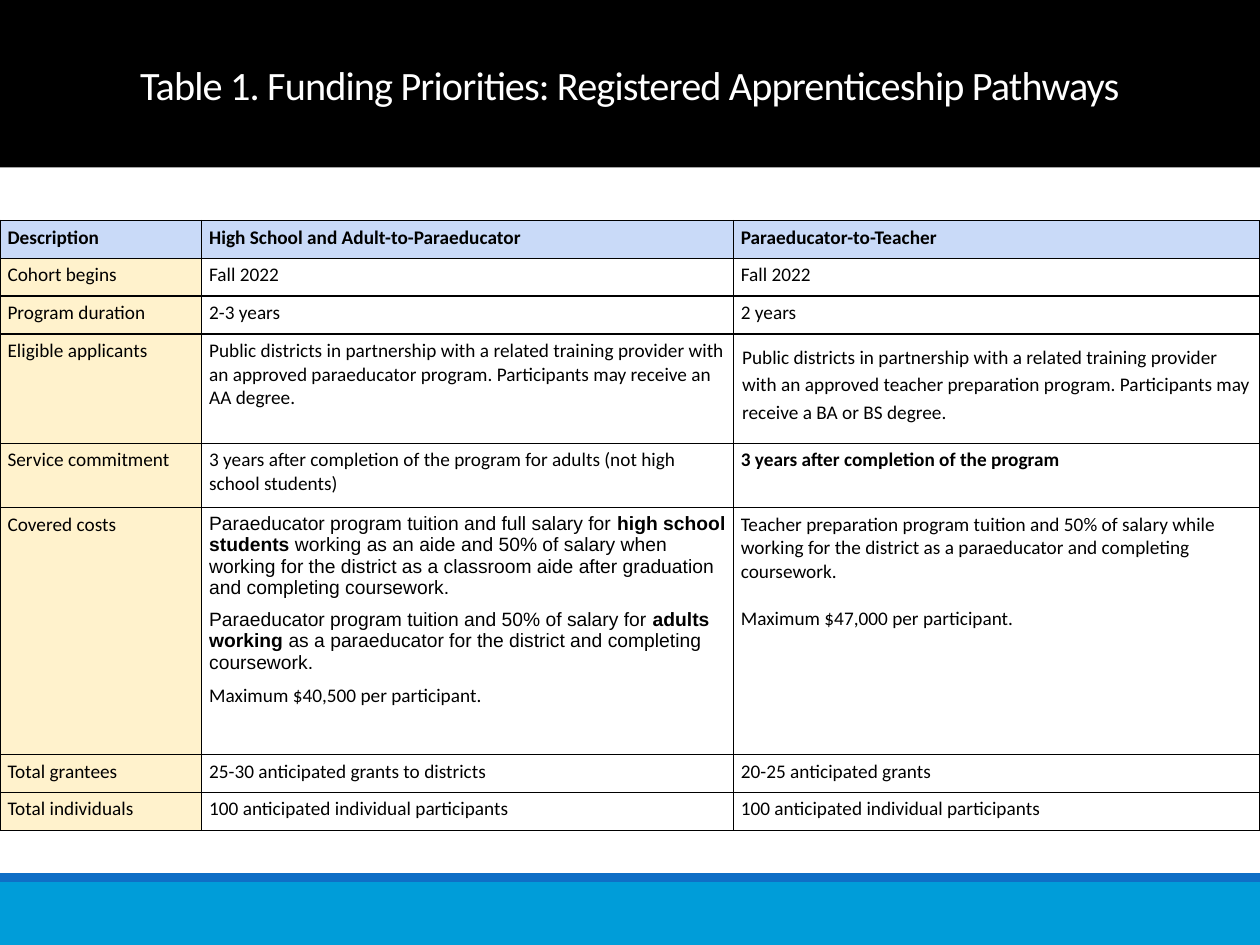
"""Build the funding priorities slide with its table of pathways."""
import dataclasses

import pptx
import pptx.dml.color
import pptx.enum.shapes
import pptx.enum.text
import pptx.oxml
import pptx.oxml.ns
import pptx.util

Inches = pptx.util.Inches
Pt = pptx.util.Pt
BLACK = "000000"
WHITE = "FFFFFF"
BLUE = "C9DAF8"
CREAM = "FFF2CC"


@dataclasses.dataclass
class Run:
    text: str
    bold: bool = False
    font: str = "Calibri"


@dataclasses.dataclass
class Para:
    runs: list[Run]
    after: float = 0
    space: float = 1


@dataclasses.dataclass
class Cell:
    paras: list[Para]
    side: float = 0.06
    edge: float = 0.04


@dataclasses.dataclass
class Band:
    top: float
    height: float
    fill: str


def plain(text: str, bold: bool = False) -> Cell:
    return Cell([Para([Run(text, bold)])])


def mixed(start: str, strong: str, end: str) -> Para:
    return Para([Run(start, font="Arial"), Run(strong, True, "Arial"),
                 Run(end, font="Arial")], after=6)


BANDS = [Band(7, 0.5, "009DD9"), Band(6.93, 0.07, "0F6FC6"), Band(0, 1.33, BLACK)]
WIDTHS = [1.6, 4.22, 4.18]
HEIGHTS = [0.3, 0.3, 0.3, 0.87, 0.51, 1.96, 0.3, 0.3]
TITLE = "Table 1. Funding Priorities: Registered Apprenticeship Pathways"
ROWS = [
    [plain("Description", True),
     plain("High School and Adult-to-Paraeducator", True),
     plain("Paraeducator-to-Teacher", True)],
    [plain("Cohort begins"), plain("Fall 2022"), plain("Fall 2022")],
    [plain("Program duration"), plain("2-3 years"), plain("2 years")],
    [plain("Eligible applicants"),
     plain("Public districts in partnership with a related training provider with "
           "an approved paraeducator program. Participants may receive an AA degree."),
     Cell([Para([Run("Public districts in partnership with a related training provider "
                     "with an approved teacher preparation program. Participants may "
                     "receive a BA or BS degree.")], space=1.15)], 0.07, 0.07)],
    [plain("Service commitment"),
     plain("3 years after completion of the program for adults (not high school students)"),
     plain("3 years after completion of the program", True)],
    [plain("Covered costs"),
     Cell([mixed("Paraeducator program tuition and full salary for ",
                 "high school students",
                 " working as an aide and 50% of salary when working for the district "
                 "as a classroom aide after graduation and completing coursework."),
           mixed("Paraeducator program tuition and 50% of salary for ",
                 "adults working",
                 " as a paraeducator for the district and completing coursework."),
           Para([Run("Maximum $40,500 per participant.")])]),
     Cell([Para([Run("Teacher preparation program tuition and 50% of salary while working "
                     "for the district as a paraeducator and completing coursework.")],
                after=13.4),
           Para([Run("Maximum $47,000 per participant.")])])],
    [plain("Total grantees"), plain("25-30 anticipated grants to districts"),
     plain("20-25 anticipated grants")],
    [plain("Total individuals"), plain("100 anticipated individual participants"),
     plain("100 anticipated individual participants")],
]


def paint(fill, tint: str) -> None:
    fill.solid()
    fill.fore_color.rgb = pptx.dml.color.RGBColor.from_string(tint)


def write(para, run: Run, size: float, tint: str):
    part = para.add_run()
    part.text = run.text
    part.font.name = run.font
    part.font.size = Pt(size)
    part.font.bold = run.bold
    paint(part.font.fill, tint)
    return part


def draw_band(slide, band: Band) -> None:
    shape = slide.shapes.add_shape(
        pptx.enum.shapes.MSO_SHAPE.RECTANGLE,
        Inches(0), Inches(band.top), Inches(10), Inches(band.height))
    shape.shadow.inherit = False
    paint(shape.fill, band.fill)
    shape.line.fill.background()


def draw_title(slide) -> None:
    title = slide.shapes.title
    title.element.getparent().append(title.element)
    title.left, title.top = Inches(0.25), Inches(0.42)
    title.width, title.height = Inches(9.5), Inches(0.5)
    frame = title.text_frame
    frame.auto_size = pptx.enum.text.MSO_AUTO_SIZE.NONE
    frame.vertical_anchor = pptx.enum.text.MSO_ANCHOR.MIDDLE
    frame.margin_left = frame.margin_right = Inches(0.07)
    frame.margin_top = frame.margin_bottom = Inches(0.04)
    para = frame.paragraphs[0]
    para.alignment = pptx.enum.text.PP_ALIGN.CENTER
    part = write(para, Run(TITLE), 23, WHITE)
    part.font._element.set("spc", "-50")


def frame_cell(box) -> None:
    props = box._tc.get_or_add_tcPr()
    for side in "LRTB":
        props.append(pptx.oxml.parse_xml(
            f'<a:ln{side} {pptx.oxml.ns.nsdecls("a")} w="12700"><a:solidFill>'
            f'<a:srgbClr val="{BLACK}"/></a:solidFill></a:ln{side}>'))


def fill_cell(box, cell: Cell, tint: str | None) -> None:
    frame_cell(box)
    if tint:
        paint(box.fill, tint)
    else:
        box.fill.background()
    box.margin_left = box.margin_right = Inches(cell.side)
    box.margin_top = box.margin_bottom = Inches(cell.edge)
    frame = box.text_frame
    for place, item in enumerate(cell.paras):
        para = frame.add_paragraph() if place else frame.paragraphs[0]
        para.space_after = Pt(item.after)
        para.line_spacing = item.space
        for run in item.runs:
            write(para, run, 11, BLACK)


def draw_table(slide) -> None:
    table = slide.shapes.add_table(
        len(HEIGHTS), len(WIDTHS), Inches(0), Inches(1.75),
        Inches(sum(WIDTHS)), Inches(sum(HEIGHTS))).table
    table.horz_banding = False
    table.first_row = False
    for column, width in zip(table.columns, WIDTHS):
        column.width = Inches(width)
    for row, height in zip(table.rows, HEIGHTS):
        row.height = Inches(height)
    for down, cells in enumerate(ROWS):
        for across, cell in enumerate(cells):
            tint = BLUE if down == 0 else CREAM if across == 0 else None
            fill_cell(table.cell(down, across), cell, tint)


def main() -> None:
    deck = pptx.Presentation()
    deck.slide_width, deck.slide_height = Inches(10), Inches(7.5)
    slide = deck.slides.add_slide(deck.slide_layouts[5])
    paint(slide.background.fill, WHITE)
    for band in BANDS:
        draw_band(slide, band)
    draw_title(slide)
    draw_table(slide)
    deck.save("out.pptx")


if __name__ == "__main__":
    main()
